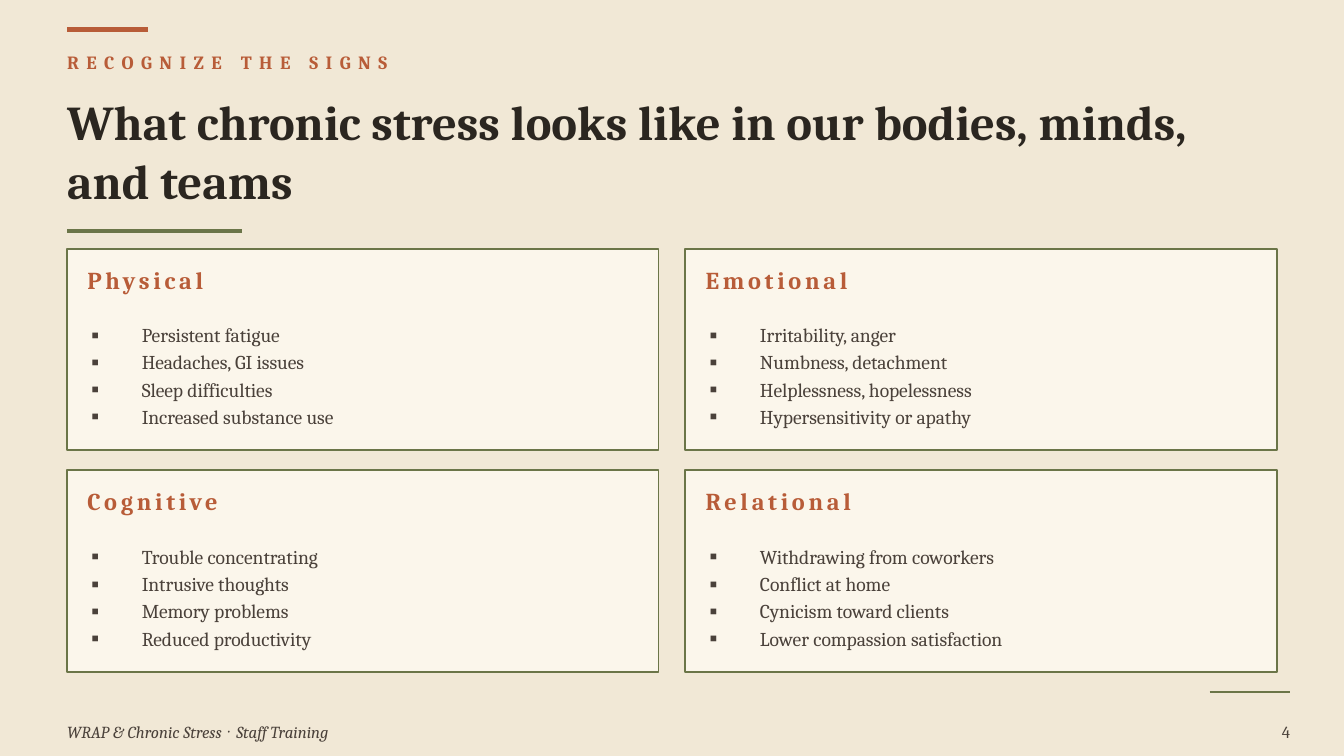
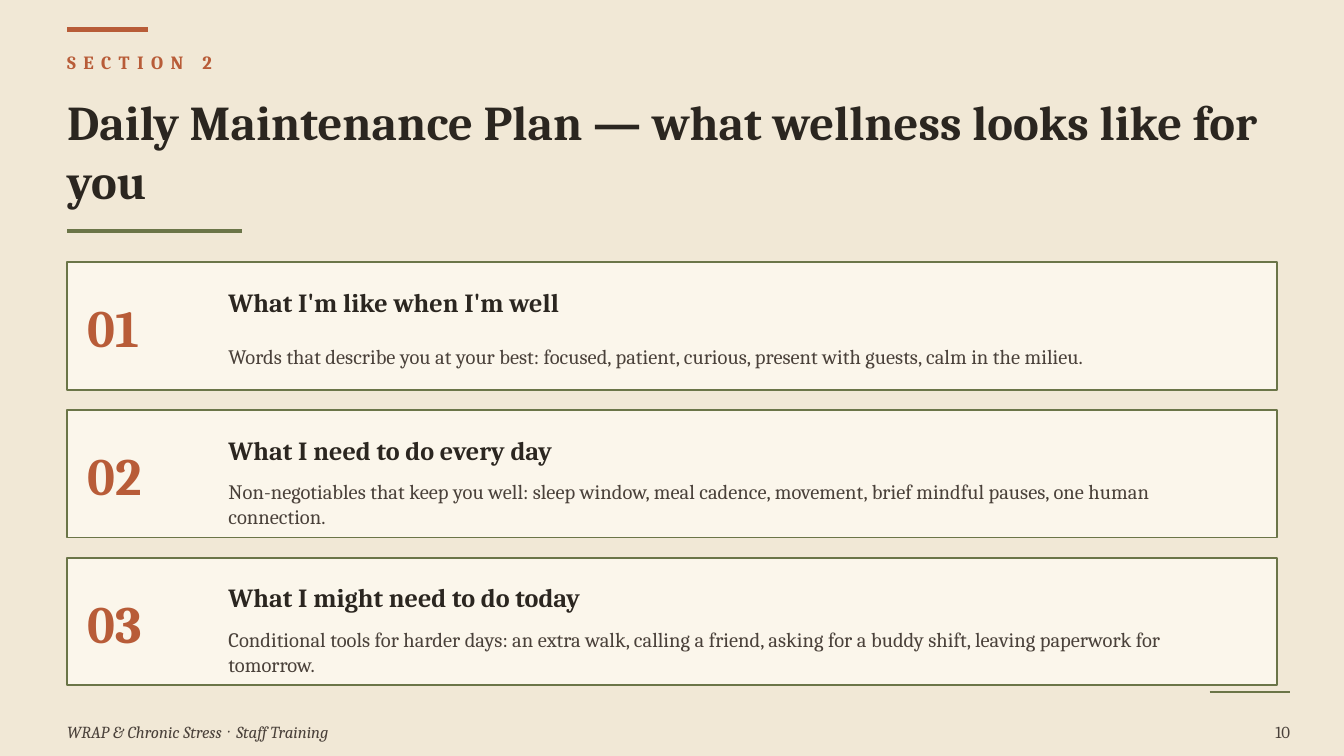
from dataclasses import dataclass
from typing import Any, NamedTuple

import pptx
import pptx.dml.color
import pptx.enum.shapes
import pptx.enum.text
import pptx.oxml.ns
import pptx.util
from lxml import etree

COLUMN = pptx.util.Inches(0.5)
ROW = pptx.util.Inches(0.1)
PAGE_WIDTH = 20 * COLUMN
PAGE_HEIGHT = PAGE_WIDTH * 9 // 16
MIDDLE = pptx.enum.text.MSO_ANCHOR.MIDDLE
LEFT = pptx.enum.text.PP_ALIGN.LEFT
RIGHT = pptx.enum.text.PP_ALIGN.RIGHT


class Style(NamedTuple):
    size: float
    color: str
    bold: bool = False
    italic: bool = False
    tracking: float = 0


@dataclass(frozen=True)
class Theme:
    font: str = "Cambria"
    paper: str = "F1E8D6"
    card: str = "FBF6EB"
    rust: str = "B85C38"
    olive: str = "6B7548"
    kicker: Style = Style(10, "B85C38", bold=True, tracking=4)
    title: Style = Style(26, "2B2620", bold=True)
    card_title: Style = Style(13, "B85C38", bold=True, tracking=2)
    bullet: Style = Style(10.5, "4A413A")
    number: Style = Style(28, "B85C38", bold=True)
    step_title: Style = Style(14, "2B2620", bold=True)
    step_text: Style = Style(11, "4A413A")
    footer: Style = Style(9, "4A413A", italic=True)
    separator: Style = Style(9, "4A413A", italic=True, tracking=1.3)
    page_number: Style = Style(9, "4A413A")


THEME = Theme()


class Area(NamedTuple):
    """A rectangle in grid columns and rows."""
    column: float
    row: float
    columns: float
    rows: float

    def inside(self, column: float, row: float, columns: float, rows: float) -> "Area":
        return Area(self.column + column, self.row + row, columns, rows)

    def lengths(self) -> tuple[int, int, int, int]:
        return (round(self.column * COLUMN), round(self.row * ROW),
                round(self.columns * COLUMN), round(self.rows * ROW))


class Rule(NamedTuple):
    column: float
    row: float
    columns: float
    color: str
    weight: float


class SignCard(NamedTuple):
    title: str
    signs: list[str]


class Step(NamedTuple):
    title: str
    text: str


RULES = [
    Rule(1, 2.2, 1.2, THEME.rust, 2.25),
    Rule(18, 51.5, 1.2, THEME.olive, 1.25),
    Rule(1, 17.2, 2.6, THEME.olive, 2),
]

SIGN_CARDS = [
    SignCard("Physical", ["Persistent fatigue", "Headaches, GI issues",
                          "Sleep difficulties", "Increased substance use"]),
    SignCard("Emotional", ["Irritability, anger", "Numbness, detachment",
                           "Helplessness, hopelessness", "Hypersensitivity or apathy"]),
    SignCard("Cognitive", ["Trouble concentrating", "Intrusive thoughts",
                           "Memory problems", "Reduced productivity"]),
    SignCard("Relational", ["Withdrawing from coworkers", "Conflict at home",
                            "Cynicism toward clients", "Lower compassion satisfaction"]),
]

STEPS = [
    Step("What I'm like when I'm well",
         "Words that describe you at your best: focused, patient, curious, "
         "present with guests, calm in the milieu."),
    Step("What I need to do every day",
         "Non-negotiables that keep you well: sleep window, meal cadence, movement, "
         "brief mindful pauses, one human connection."),
    Step("What I might need to do today",
         "Conditional tools for harder days: an extra walk, calling a friend, "
         "asking for a buddy shift, leaving paperwork for tomorrow."),
]


def rgb(color: str) -> pptx.dml.color.RGBColor:
    return pptx.dml.color.RGBColor.from_string(color)


def add_span(para: Any, text: str, style: Style) -> None:
    span = para.add_run()
    span.text = text
    font = span.font
    font.name, font.size = THEME.font, pptx.util.Pt(style.size)
    font.bold, font.italic = style.bold, style.italic
    font.color.rgb = rgb(style.color)
    if style.tracking:
        font._element.set("spc", str(round(style.tracking * 100)))


def prepare_frame(box: Any) -> Any:
    frame = box.text_frame
    frame.word_wrap = True
    frame.auto_size = pptx.enum.text.MSO_AUTO_SIZE.NONE
    frame.vertical_anchor = MIDDLE
    frame.margin_left = frame.margin_right = frame.margin_top = frame.margin_bottom = 0
    return frame


def add_text(page: Any, area: Area, *spans: tuple[str, Style], align: Any = LEFT) -> None:
    para = prepare_frame(page.shapes.add_textbox(*area.lengths())).paragraphs[0]
    para.alignment = align
    for text, style in spans:
        add_span(para, text, style)


def add_bullets(page: Any, area: Area, items: list[str]) -> None:
    frame = prepare_frame(page.shapes.add_textbox(*area.lengths()))
    indent = pptx.util.Pt(27)
    for index, item in enumerate(items):
        para = frame.add_paragraph() if index else frame.paragraphs[0]
        para.space_after = pptx.util.Pt(2)
        properties = para._p.get_or_add_pPr()
        properties.set("marL", str(indent))
        properties.set("indent", str(-indent))
        for tag, key, value in (("a:buSzPct", "val", "100000"),
                                ("a:buFont", "typeface", THEME.font),
                                ("a:buChar", "char", "▪")):
            etree.SubElement(properties, pptx.oxml.ns.qn(tag)).set(key, value)
        add_span(para, item, THEME.bullet)


def add_rule(page: Any, rule: Rule) -> None:
    left, top, width, _ = Area(rule.column, rule.row, rule.columns, 0).lengths()
    line = page.shapes.add_connector(
        pptx.enum.shapes.MSO_CONNECTOR.STRAIGHT, left, top, left + width, top)
    line.line.color.rgb = rgb(rule.color)
    line.line.width = pptx.util.Pt(rule.weight)
    etree.SubElement(line._element.spPr, pptx.oxml.ns.qn("a:effectLst"))


def add_panel(page: Any, area: Area) -> None:
    panel = page.shapes.add_shape(pptx.enum.shapes.MSO_SHAPE.RECTANGLE, *area.lengths())
    panel.shadow.inherit = False
    panel.fill.solid()
    panel.fill.fore_color.rgb = rgb(THEME.card)
    panel.line.color.rgb = rgb(THEME.olive)
    panel.line.width = pptx.util.Pt(1)


def add_page(deck: Any, kicker: str, title: str, number: int) -> Any:
    """Add a page with the heading, rules and footer that all pages share."""
    page = deck.slides.add_slide(deck.slide_layouts[5])
    page.background.fill.solid()
    page.background.fill.fore_color.rgb = rgb(THEME.paper)
    heading = page.shapes.title
    heading.left, heading.top, heading.width, heading.height = Area(1, 6.2, 18, 10).lengths()
    para = prepare_frame(heading).paragraphs[0]
    para.alignment = LEFT
    add_span(para, title, THEME.title)
    add_text(page, Area(1, 3.2, 12, 2.8), (kicker, THEME.kicker))
    for rule in RULES:
        add_rule(page, rule)
    add_text(page, Area(1, 53.2, 12, 2.5), ("WRAP & Chronic Stress", THEME.footer),
             (" · ", THEME.separator), ("Staff Training", THEME.footer))
    add_text(page, Area(18.2, 53.2, 1, 2.5), (str(number), THEME.page_number), align=RIGHT)
    return page


def add_sign_cards(page: Any) -> None:
    for index, card in enumerate(SIGN_CARDS):
        row, column = divmod(index, 2)
        area = Area(1 + 9.2 * column, 18.5 + 16.5 * row, 8.8, 15)
        add_panel(page, area)
        add_text(page, area.inside(0.3, 0.8, 8, 3), (card.title, THEME.card_title))
        add_bullets(page, area.inside(0.36, 4.2, 8.2, 10.5), card.signs)


def add_steps(page: Any) -> None:
    for index, step in enumerate(STEPS):
        area = Area(1, 19.5 + 11 * index, 18, 9.5)
        add_panel(page, area)
        add_text(page, area.inside(0.3, 1.8, 1.8, 6), (f"{index + 1:02}", THEME.number))
        add_text(page, area.inside(2.4, 1.2, 15, 3.5), (step.title, THEME.step_title))
        add_text(page, area.inside(2.4, 4.5, 15, 5), (step.text, THEME.step_text))


def main() -> None:
    deck = pptx.Presentation()
    deck.slide_width = PAGE_WIDTH
    deck.slide_height = PAGE_HEIGHT
    add_sign_cards(add_page(
        deck, "RECOGNIZE THE SIGNS",
        "What chronic stress looks like in our bodies, minds, and teams", 4))
    add_steps(add_page(
        deck, "SECTION 2", "Daily Maintenance Plan — what wellness looks like for you", 10))
    deck.save("out.pptx")


if __name__ == "__main__":
    main()
